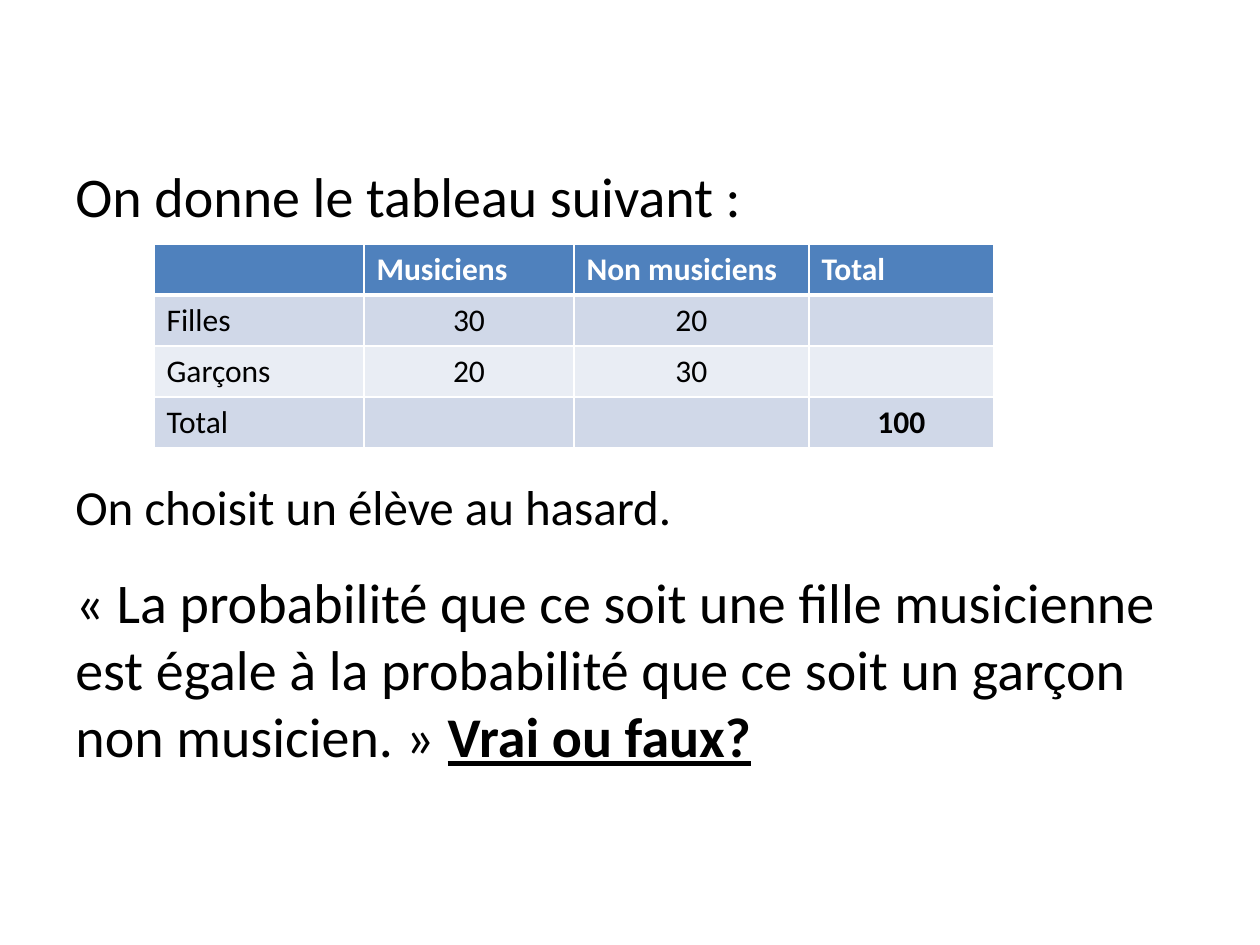
from dataclasses import dataclass

from lxml import etree
from pptx import Presentation
from pptx.dml.color import RGBColor
from pptx.enum.text import PP_ALIGN
from pptx.oxml.ns import qn
from pptx.util import Pt

LEFT, CENTER = PP_ALIGN.LEFT, PP_ALIGN.CENTER
PX = 914400 // 126
BLANK = 6


@dataclass(frozen=True)
class Theme:
    font: str = "Calibri"
    ink: str = "000000"
    white: str = "FFFFFF"
    header: str = "4F81BD"
    bands: tuple = ("D0D8E8", "E9EDF4")
    large: int = 32
    medium: int = 28
    cell: int = 18
    thin: int = 1
    thick: int = 3


class SlideBuilder:
    def __init__(self, prs, theme):
        self.theme = theme
        self.s = prs.slides.add_slide(prs.slide_layouts[BLANK])

    def style(self, r, size, color, bold=False, underline=False):
        f = r.font
        f.name, f.size, f.bold, f.underline = self.theme.font, Pt(size), bold, underline
        f.color.rgb = RGBColor.from_string(color)

    def text(self, x, y, w, h, paragraphs):
        """Each paragraph is (space before, size, plain text, emphasised text)."""
        sp = self.s.shapes.add_textbox(x * PX, y * PX, w * PX, h * PX)
        tf = sp.text_frame
        tf.word_wrap = True
        for i, (before, size, plain, emphasis) in enumerate(paragraphs):
            p = tf.add_paragraph() if i else tf.paragraphs[0]
            p.text = plain
            p.space_before = Pt(before)
            self.style(p.runs[0], size, self.theme.ink)
            if emphasis:
                r = p.add_run()
                r.text = emphasis
                self.style(r, size, self.theme.ink, bold=True, underline=True)

    def borders(self, cell, top, bottom):
        t = self.theme
        tcPr = cell._tc.get_or_add_tcPr()
        sides = (("a:lnL", t.thin), ("a:lnR", t.thin), ("a:lnT", top), ("a:lnB", bottom))
        for i, (tag, width) in enumerate(sides):
            ln = etree.Element(qn(tag), w=str(Pt(width)))
            fill = etree.SubElement(ln, qn("a:solidFill"))
            etree.SubElement(fill, qn("a:srgbClr"), val=t.white)
            tcPr.insert(i, ln)

    def table(self, x, y, widths, row_height, rows):
        t = self.theme
        frame = self.s.shapes.add_table(len(rows), len(widths), x * PX, y * PX,
                                        sum(widths) * PX, row_height * len(rows) * PX)
        table = frame.table
        table.horz_banding = False
        for column, width in zip(table.columns, widths):
            column.width = width * PX
        for i, values in enumerate(rows):
            table.rows[i].height = row_height * PX
            header = i == 0
            fill = t.header if header else t.bands[(i - 1) % 2]
            for j, value in enumerate(values):
                cell = table.cell(i, j)
                cell.fill.solid()
                cell.fill.fore_color.rgb = RGBColor.from_string(fill)
                self.borders(cell, t.thick if i == 1 else t.thin,
                             t.thick if header else t.thin)
                cell.text_frame.text = value
                p = cell.text_frame.paragraphs[0]
                p.alignment = LEFT if header or j == 0 else CENTER
                grand_total = i == len(rows) - 1 and j == len(values) - 1
                for r in p.runs:
                    self.style(r, t.cell, t.white if header else t.ink,
                               bold=header or grand_total)


def main():
    prs = Presentation()
    prs.slide_width, prs.slide_height = 1260 * PX, 945 * PX
    theme = Theme()
    slide = SlideBuilder(prs, theme)

    # Question, with room left for the table
    slide.text(63, 155, 1134, 689, [
        (0, theme.large, "On donne le tableau suivant :", ""),
        (142, theme.medium, "On choisit un élève au hasard.", ""),
        (18, theme.large,
         "« La probabilité que ce soit une fille musicienne est égale à la "
         "probabilité que ce soit un garçon non musicien. » ", "Vrai ou faux?"),
    ])

    # Two-way table of pupils
    slide.table(154, 244, (210, 210, 235, 185), 51, [
        ("", "Musiciens", "Non musiciens", "Total"),
        ("Filles", "30", "20", ""),
        ("Garçons", "20", "30", ""),
        ("Total", "", "", "100"),
    ])

    prs.save("out.pptx")


if __name__ == "__main__":
    main()
